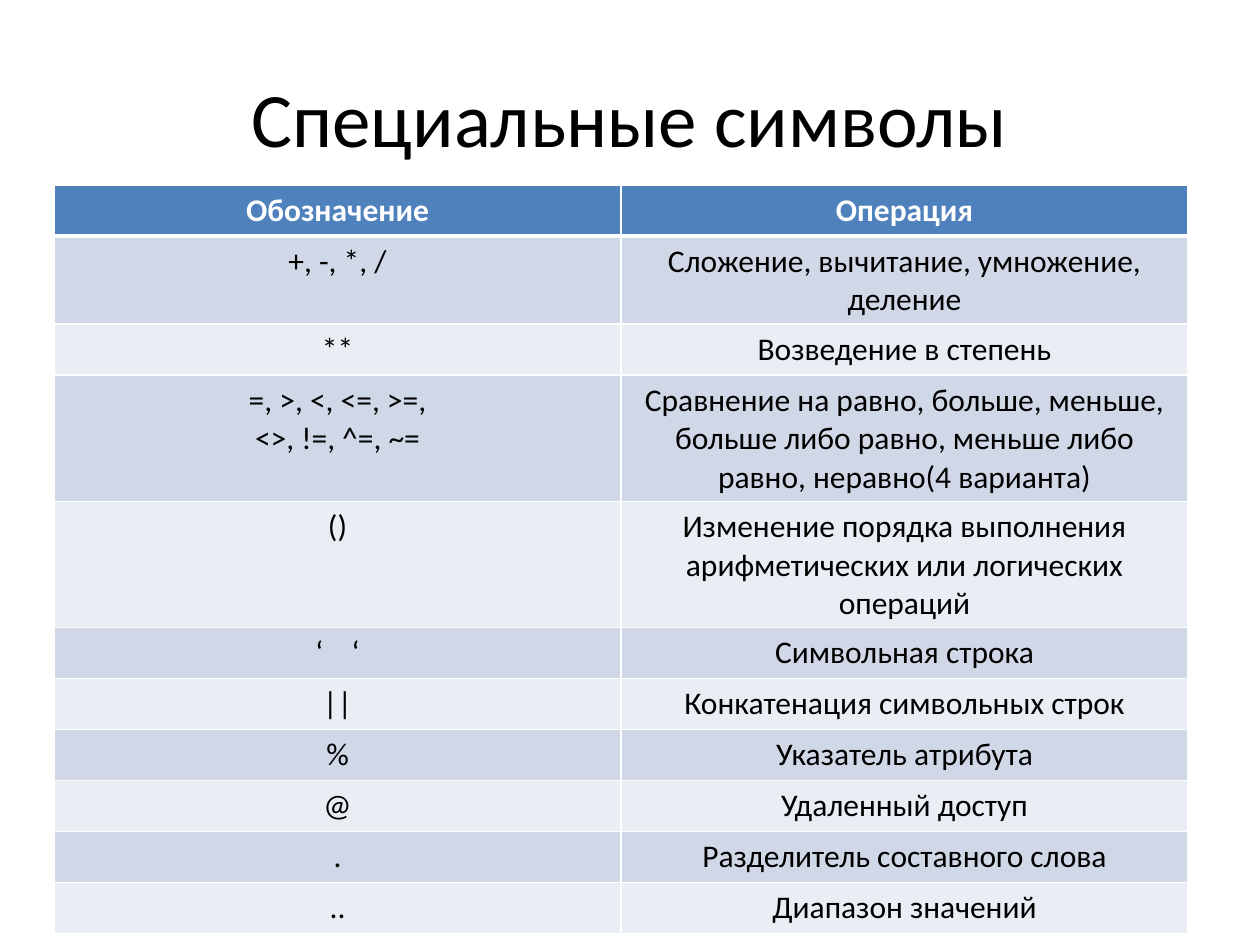
from lxml.etree import SubElement
from pptx import Presentation
from pptx.dml.color import RGBColor
from pptx.enum.text import MSO_ANCHOR as Anchor, PP_ALIGN as Align
from pptx.oxml.ns import qn
from pptx.util import Emu, Pt

FONT = "Calibri"
BLACK = RGBColor(0x00, 0x00, 0x00)
WHITE = RGBColor(0xFF, 0xFF, 0xFF)
HEADER_BLUE = RGBColor(0x4F, 0x81, 0xBD)
BAND_DARK = RGBColor(0xD0, 0xD8, 0xE8)
BAND_LIGHT = RGBColor(0xE9, 0xED, 0xF4)

OPERATIONS = [
    ("Обозначение", "Операция"),
    ("+, -, *, /", "Сложение, вычитание, умножение, деление"),
    ("**", "Возведение в степень"),
    ("=, >, <, <=, >=,\n<>, !=, ^=, ~=",
     "Сравнение на равно, больше, меньше, больше либо равно, "
     "меньше либо равно, неравно(4 варианта)"),
    ("()", "Изменение порядка выполнения арифметических или логических операций"),
    ("‘    ‘", "Символьная строка"),
    ("||", "Конкатенация символьных строк"),
    ("%", "Указатель атрибута"),
    ("@", "Удаленный доступ"),
    (".", "Разделитель составного слова"),
    ("..", "Диапазон значений"),
]


def px(length):
    return Emu(round(length * 914400 / 126))


def write(frame, text, size, color, bold=False):
    frame.text = text
    for paragraph in frame.paragraphs:
        paragraph.alignment = Align.CENTER
        paragraph.font.name = FONT
        paragraph.font.size = Pt(size)
        paragraph.font.bold = bold
        paragraph.font.color.rgb = color


deck = Presentation()
deck.slide_width, deck.slide_height = px(1260), px(945)
slide = deck.slides.add_slide(deck.slide_layouts[6])

# Title
title = slide.shapes.add_textbox(px(63), px(38), px(1134), px(157)).text_frame
title.word_wrap = True
title.vertical_anchor = Anchor.MIDDLE
write(title, "Специальные символы", 44, BLACK)

# Table of symbols and operations
ROW_HEIGHT = 51
symbols = slide.shapes.add_table(
    len(OPERATIONS), 2, px(54), px(185), px(1134), px(ROW_HEIGHT * len(OPERATIONS))
).table

for row, texts in enumerate(OPERATIONS):
    symbols.rows[row].height = px(ROW_HEIGHT)
    is_header = row == 0
    band = HEADER_BLUE if is_header else BAND_DARK if row % 2 else BAND_LIGHT
    for column, text in enumerate(texts):
        cell = symbols.cell(row, column)
        write(cell.text_frame, text, 18, WHITE if is_header else BLACK, is_header)

        # White borders, with a thick rule under the header
        borders = {"L": 1, "R": 1, "T": 3 if row == 1 else 1, "B": 3 if is_header else 1}
        properties = cell._tc.get_or_add_tcPr()
        for side, width in borders.items():
            line = SubElement(properties, qn(f"a:ln{side}"), w=str(Pt(width)))
            line_fill = SubElement(line, qn("a:solidFill"))
            SubElement(line_fill, qn("a:srgbClr"), val=str(WHITE))

        cell.fill.solid()
        cell.fill.fore_color.rgb = band

deck.save("out.pptx")
